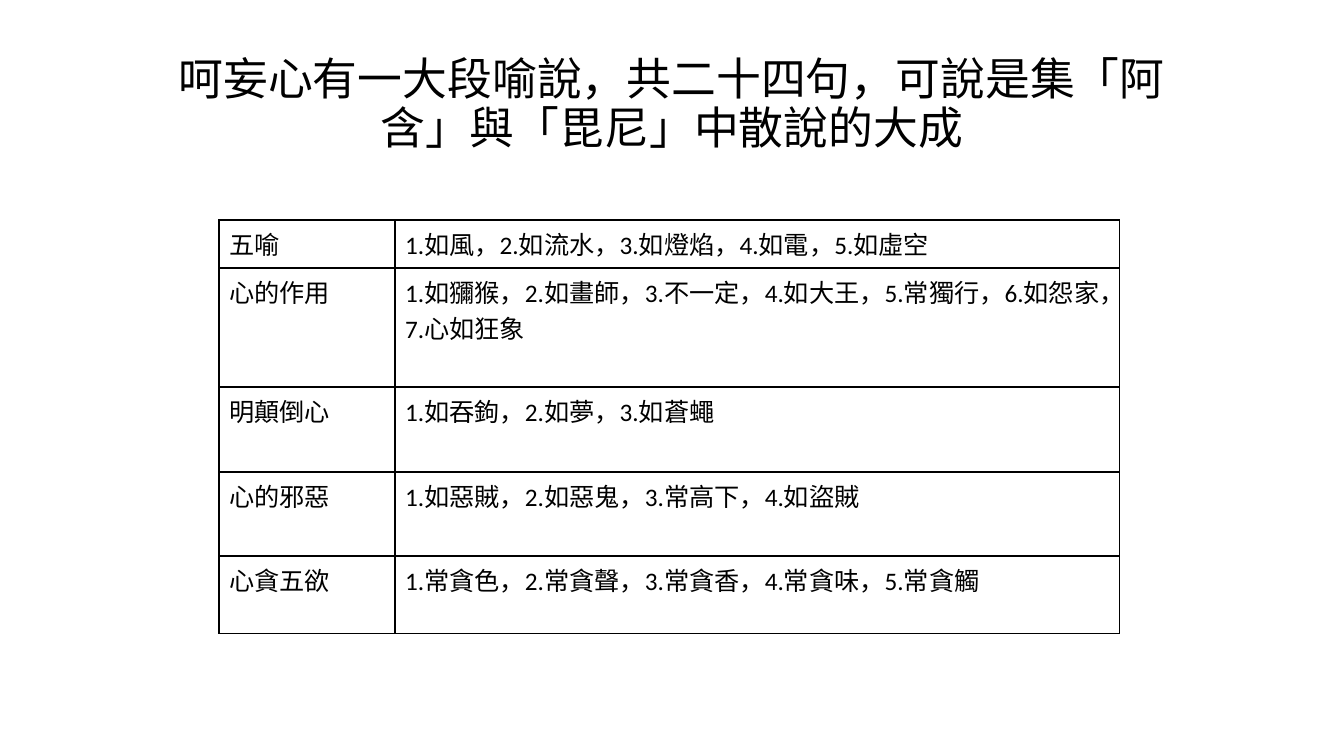
from dataclasses import dataclass

from lxml.etree import SubElement
from pptx import Presentation
from pptx.dml.color import RGBColor
from pptx.enum.text import MSO_ANCHOR as Anchor, PP_ALIGN as Align
from pptx.oxml.ns import qn
from pptx.util import Emu, Pt

# Content
TITLE = "呵妄心有一大段喻說，共二十四句，可說是集「阿含」與「毘尼」中散說的大成"
SIMILES = [
    ("五喻", ["1.如風，2.如流水，3.如燈焰，4.如電，5.如虛空"]),
    ("心的作用", ["1.如獼猴，2.如畫師，3.不一定，4.如大王，5.常獨行，6.如怨家，",
              "7.心如狂象"]),
    ("明顛倒心", ["1.如吞鉤，2.如夢，3.如蒼蠅"]),
    ("心的邪惡", ["1.如惡賊，2.如惡鬼，3.常高下，4.如盜賊"]),
    ("心貪五欲", ["1.常貪色，2.常貪聲，3.常貪香，4.常貪味，5.常貪觸"]),
]

# Layout in px
PAGE_SIZE = (1344, 756)
TITLE_BOX = (168, 19, 1008, 140)
TABLE_CORNER = (219, 220)
COLUMN_WIDTHS = (176, 725)
ROW_HEIGHTS = (48, 119, 85, 84, 78)


@dataclass(frozen=True)
class Theme:
    font: str = "Calibri"
    ink: str = "000000"
    title_size: int = 32
    cell_size: int = 18
    border: int = 1


theme = Theme()


def px(length):
    return Emu(round(length * 914400 / 100.8))


def style(para, size):
    para.font.name = theme.font
    para.font.size = Pt(size)
    para.font.color.rgb = RGBColor.from_string(theme.ink)


def add_borders(cell):
    properties = cell._tc.get_or_add_tcPr()
    for position, side in enumerate(("a:lnL", "a:lnR", "a:lnT", "a:lnB")):
        line = SubElement(properties, qn(side), w=str(Pt(theme.border)))
        fill = SubElement(line, qn("a:solidFill"))
        SubElement(fill, qn("a:srgbClr"), val=theme.ink)
        properties.insert(position, line)


def fill_cell(cell, lines):
    cell.fill.background()
    add_borders(cell)
    cell.text = "\n".join(lines)
    for para in cell.text_frame.paragraphs:
        style(para, theme.cell_size)


def add_title(page):
    frame = page.shapes.add_textbox(*map(px, TITLE_BOX)).text_frame
    frame.word_wrap = True
    frame.vertical_anchor = Anchor.BOTTOM
    para = frame.paragraphs[0]
    para.text = TITLE
    para.alignment = Align.CENTER
    para.line_spacing = 0.9
    style(para, theme.title_size)


def add_simile_table(page):
    extent = (sum(COLUMN_WIDTHS), sum(ROW_HEIGHTS))
    table = page.shapes.add_table(len(SIMILES), len(COLUMN_WIDTHS),
                                  *map(px, TABLE_CORNER + extent)).table
    table.first_row = table.horz_banding = False
    for column, width in zip(table.columns, COLUMN_WIDTHS):
        column.width = px(width)
    for row, height, (topic, lines) in zip(table.rows, ROW_HEIGHTS, SIMILES):
        row.height = px(height)
        for cell, text in zip(row.cells, ([topic], lines)):
            fill_cell(cell, text)


def main():
    deck = Presentation()
    deck.slide_width, deck.slide_height = map(px, PAGE_SIZE)
    page = deck.slides.add_slide(deck.slide_layouts[6])
    add_title(page)
    add_simile_table(page)
    deck.save("out.pptx")


if __name__ == "__main__":
    main()
